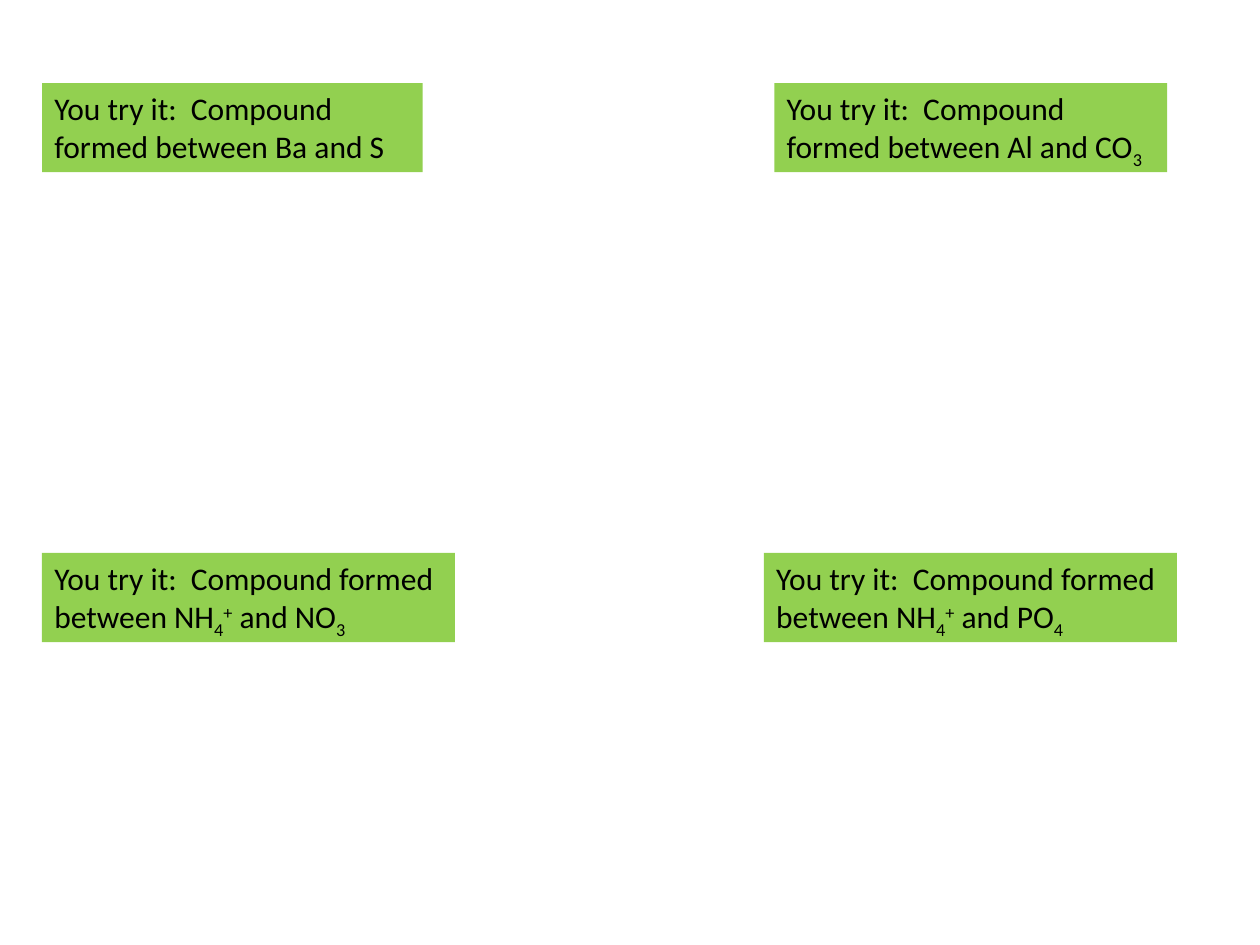
from pptx import Presentation
from pptx.dml.color import RGBColor
from pptx.enum.text import MSO_AUTO_SIZE
from pptx.util import Pt

GREEN = RGBColor(0x92, 0xD0, 0x50)
BLACK = RGBColor(0, 0, 0)
FIT_SHAPE = MSO_AUTO_SIZE.SHAPE_TO_FIT_TEXT

SUB, SUPER = -25000, 30000
PROMPT = "You try it:  Compound formed between "
AMMONIUM = [("NH", 0), ("4", SUB), ("+", SUPER)]
TOP_ROW, BOTTOM_ROW = 47.5, 316
BOX_HEIGHT = 50.9

# left, top, width, formula pieces as (text, baseline)
EXERCISES = [
    (24, TOP_ROW, 217.5, [("Ba and S", 0)]),
    (442.5, TOP_ROW, 224.5, [("Al and CO", 0), ("3", SUB)]),
    (24, BOTTOM_ROW, 236, AMMONIUM + [(" and NO", 0), ("3", SUB)]),
    (436.5, BOTTOM_ROW, 236, AMMONIUM + [(" and PO", 0), ("4", SUB)]),
]


def add_exercise(s, left, top, width, formula):
    box = s.shapes.add_textbox(Pt(left), Pt(top), Pt(width), Pt(BOX_HEIGHT))
    box.fill.solid()
    box.fill.fore_color.rgb = GREEN
    tf = box.text_frame
    tf.word_wrap = True
    tf.auto_size = FIT_SHAPE
    p = tf.paragraphs[0]
    p.font.name = "Calibri"
    p.font.size = Pt(18)
    p.font.color.rgb = BLACK
    (first, baseline), *rest = formula
    for text, baseline in [(PROMPT + first, baseline), *rest]:
        r = p.add_run()
        r.text = text
        if baseline:
            r.font._element.set("baseline", str(baseline))


prs = Presentation()
prs.slide_width, prs.slide_height = Pt(720), Pt(540)
s = prs.slides.add_slide(prs.slide_layouts[6])
for exercise in EXERCISES:
    add_exercise(s, *exercise)
prs.save("out.pptx")
